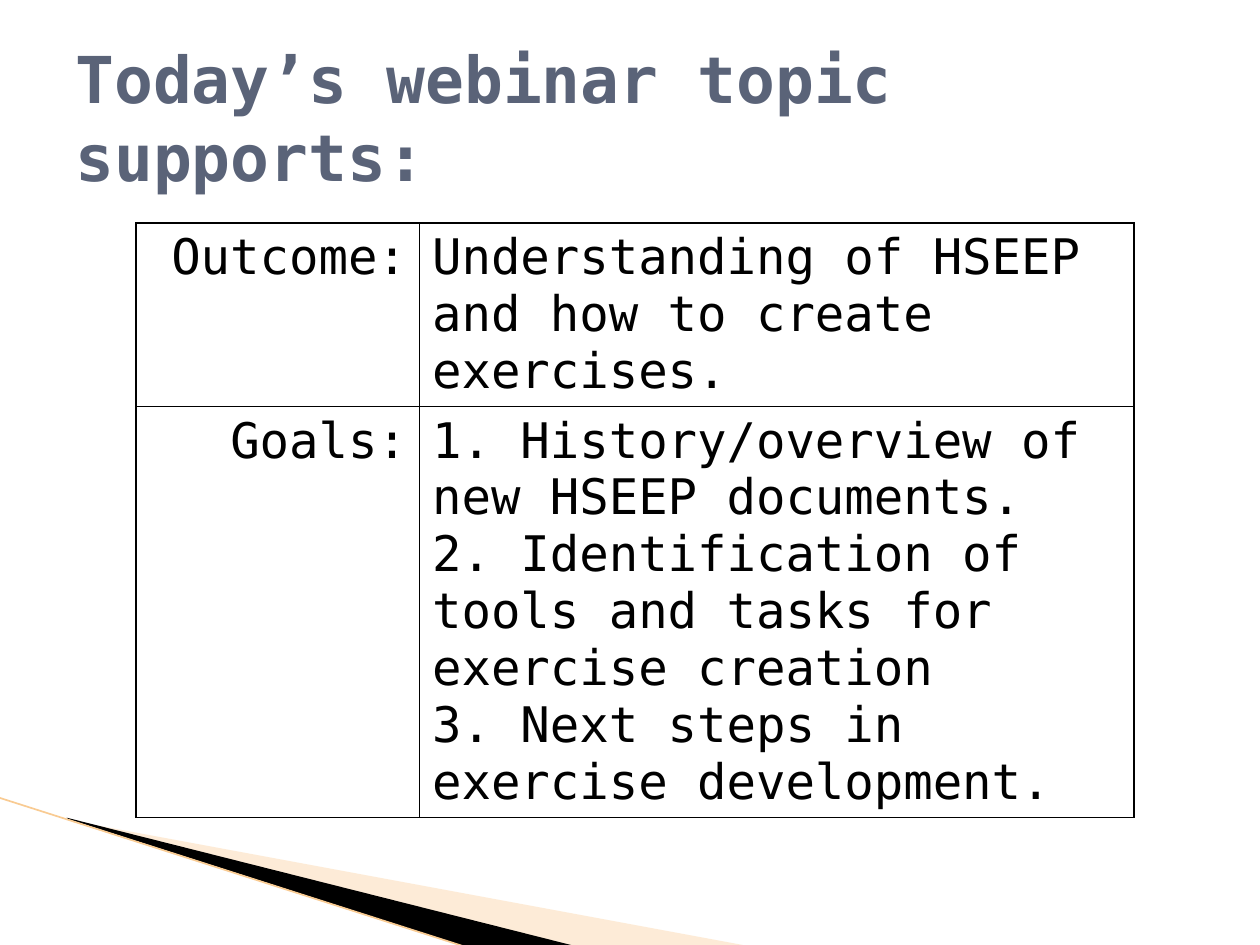
"""Build the webinar slide that lists the outcome and goals it supports."""
from dataclasses import dataclass

from lxml import etree
from pptx import Presentation
from pptx.dml.color import RGBColor
from pptx.enum.shapes import MSO_CONNECTOR
from pptx.enum.text import MSO_ANCHOR, PP_ALIGN
from pptx.oxml.ns import qn
from pptx.util import Inches, Pt

STRAIGHT = MSO_CONNECTOR.STRAIGHT
MIDDLE = MSO_ANCHOR.MIDDLE
LEFT, RIGHT = PP_ALIGN.LEFT, PP_ALIGN.RIGHT


@dataclass(frozen=True)
class Theme:
    font: str = "DejaVu Sans Mono"
    title: str = "5A6378"
    ink: str = "000000"
    peach: str = "FCCF9B"
    gold: str = "F9CB92"
    title_size: float = 36.9
    body_size: float = 28
    border_width: float = 1
    edge_width: float = 0.95


theme = Theme()


def style_text(paragraph, size, color, bold=False):
    paragraph.font.name = theme.font
    paragraph.font.size = Pt(size)
    paragraph.font.bold = bold
    paragraph.font.color.rgb = RGBColor.from_string(color)


def add_border(cell, side):
    border = etree.SubElement(
        cell._tc.get_or_add_tcPr(), qn(f"a:{side}"), w=str(Pt(theme.border_width))
    )
    fill = etree.SubElement(border, qn("a:solidFill"))
    etree.SubElement(fill, qn("a:srgbClr"), val=theme.ink)


prs = Presentation()
prs.slide_width, prs.slide_height = Inches(10), Inches(7.5)
slide = prs.slides.add_slide(prs.slide_layouts[6])

wedges = [
    ([(0.55, 6.51), (5.95, 7.51), (4.56, 7.51), (0.55, 6.5)], theme.peach, 40),
    ([(0.53, 6.49), (4.57, 7.51), (3.72, 7.52), (0.54, 6.5)], theme.ink, 100),
]
for points, color, opacity in wedges:
    corners = [(Inches(x), Inches(y)) for x, y in points]
    outline = slide.shapes.build_freeform(*corners[0])
    outline.add_line_segments(corners[1:], close=True)
    wedge = outline.convert_to_shape()
    wedge.shadow.inherit = False
    wedge.line.fill.background()
    wedge.fill.solid()
    wedge.fill.fore_color.rgb = RGBColor.from_string(color)
    if opacity < 100:
        tint = wedge._element.spPr.find(qn("a:solidFill")).find(qn("a:srgbClr"))
        etree.SubElement(tint, qn("a:alpha"), val=str(opacity * 1000))

edge = slide.shapes.add_connector(
    STRAIGHT, Inches(-0.01), Inches(6.33), Inches(3.71), Inches(7.52)
)
edge.line.color.rgb = RGBColor.from_string(theme.gold)
edge.line.width = Pt(theme.edge_width)
etree.SubElement(edge._element.spPr, qn("a:effectLst"))

rows = [
    ("Outcome:", ["Understanding of HSEEP and how to create exercises."], 1.14),
    (
        "Goals:",
        [
            "1. History/overview of new HSEEP documents.",
            "2. Identification of tools and tasks for exercise creation",
            "3. Next steps in exercise development.",
        ],
        2.84,
    ),
]
column_widths = [2.25, 5.67]
supports = slide.shapes.add_table(
    len(rows), len(column_widths), Inches(1.08), Inches(1.77), Inches(7.92), Inches(3.98)
).table
supports.first_row = supports.horz_banding = False
for column, width in zip(supports.columns, column_widths):
    column.width = Inches(width)

for row_index, (label, statements, height) in enumerate(rows):
    supports.rows[row_index].height = Inches(height)
    for column_index, (lines, align) in enumerate([([label], RIGHT), (statements, LEFT)]):
        cell = supports.cell(row_index, column_index)
        cell.text = "\n".join(lines)
        for paragraph in cell.text_frame.paragraphs:
            paragraph.alignment = align
            style_text(paragraph, theme.body_size, theme.ink)
        for side in ("lnL", "lnR", "lnT", "lnB"):
            add_border(cell, side)
        cell.fill.background()

title = slide.shapes.add_textbox(Inches(0.5), Inches(0.3), Inches(9), Inches(1.25))
title.text_frame.word_wrap = True
title.text_frame.vertical_anchor = MIDDLE
title.text_frame.text = "Today’s webinar topic supports:"
style_text(title.text_frame.paragraphs[0], theme.title_size, theme.title, bold=True)

prs.save("out.pptx")
